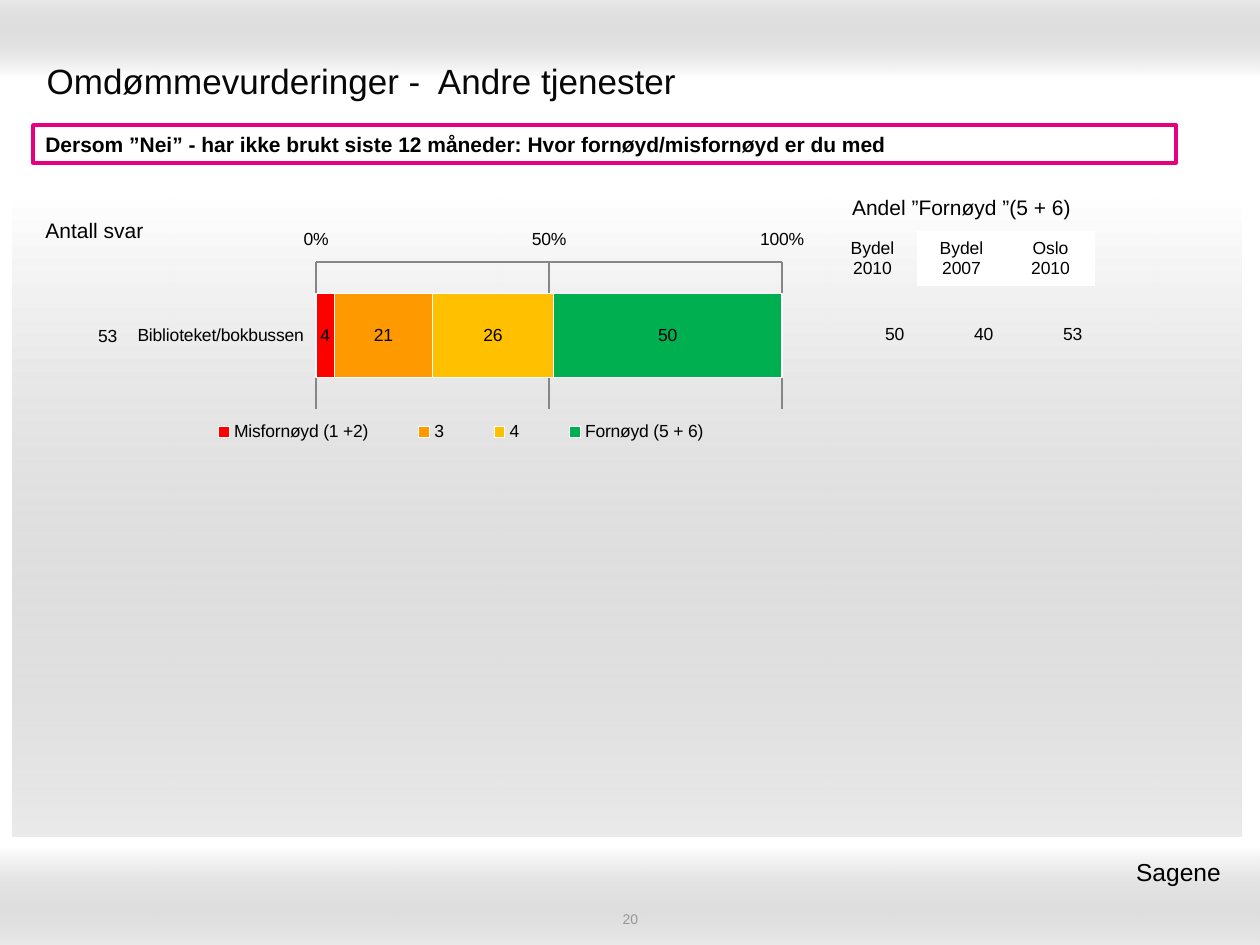
from lxml import etree
from pptx import Presentation
from pptx.chart.data import CategoryChartData
from pptx.dml.color import RGBColor
from pptx.enum.chart import (XL_CHART_TYPE, XL_LABEL_POSITION, XL_LEGEND_POSITION,
                             XL_TICK_LABEL_POSITION, XL_TICK_MARK)
from pptx.enum.shapes import MSO_SHAPE
from pptx.enum.text import MSO_ANCHOR, PP_ALIGN
from pptx.oxml import parse_xml
from pptx.oxml.ns import qn
from pptx.util import Pt

LEFT, CENTER, RIGHT = PP_ALIGN.LEFT, PP_ALIGN.CENTER, PP_ALIGN.RIGHT
MIDDLE, TOP = MSO_ANCHOR.MIDDLE, MSO_ANCHOR.TOP
LOW = XL_TICK_LABEL_POSITION.LOW
NO_TICK, INSIDE_TICK = XL_TICK_MARK.NONE, XL_TICK_MARK.INSIDE
FONT = "Arial"
NO_STYLE = "{2D5ABB26-0587-4C30-8999-92F81FD0307C}"
COLORS = {"black": "000000", "title": "080808", "white": "FFFFFF", "band": "999999",
          "number": "969696", "frame": "E7007E", "axis": "868686", "red": "FF0000",
          "orange": "FF9900", "yellow": "FFC000", "green": "00B050"}

TITLE = "Omdømmevurderinger -  Andre tjenester"
QUESTION = "Dersom ”Nei” - har ikke brukt siste 12 måneder: Hvor fornøyd/misfornøyd er du med"
DISTRICT = "Sagene "
PAGE = "20"
BANDS = [((0, 0, 1260, 78), 270), ((0, 847, 1260, 98), 90), ((13, 196, 1228, 641), 90)]
SERVICE = "Biblioteket/bokbussen"
RATINGS = [("Misfornøyd (1 +2)", 4, "red"), ("3", 21, "orange"),
           ("4", 26, "yellow"), ("Fornøyd (5 + 6)", 50, "green")]
CHART_BOX = (123, 226, 694, 227)
PLOT_BOX = (316, 262, 466, 147)
LEGEND_BOX = (174, 420, 574, 24)
SHARE_TITLE = "Andel ”Fornøyd ”(5 + 6)"
SHARE_HEADS = ["Bydel\n2010", "Bydel\n2007", "Oslo\n2010"]
SHARES = ["50", "40", "53"]
ANSWERS_HEAD, ANSWERS = "Antall svar", "53"


def px(value):
    return round(value * 914400 / 126)


def box(bounds):
    return [px(value) for value in bounds]


def rgb(name):
    return RGBColor.from_string(COLORS[name])


def set_font(font, size, color="black", bold=False):
    font.name, font.size, font.bold = FONT, Pt(size), bold
    font.color.rgb = rgb(color)


def write(frame, text, size, align=LEFT, color="black", bold=False, anchor=MIDDLE):
    frame.word_wrap = True
    frame.vertical_anchor = anchor
    frame.text = text
    for paragraph in frame.paragraphs:
        paragraph.alignment = align
        set_font(paragraph.font, size, color, bold)


def add_text(bounds, *args, **kwargs):
    write(slide.shapes.add_textbox(*box(bounds)).text_frame, *args, **kwargs)


def add_rectangle(bounds):
    rectangle = slide.shapes.add_shape(MSO_SHAPE.RECTANGLE, *box(bounds))
    rectangle.shadow.inherit = False
    return rectangle


def add_band(bounds, angle, order):
    band = add_rectangle(bounds)
    band.line.fill.background()
    gradient = parse_xml(
        '<a:gradFill xmlns:a="http://schemas.openxmlformats.org/drawingml/2006/main" rotWithShape="1">'
        f'<a:gsLst><a:gs pos="0"><a:srgbClr val="{COLORS["white"]}"/></a:gs>'
        f'<a:gs pos="100000"><a:srgbClr val="{COLORS["band"]}"><a:alpha val="20000"/></a:srgbClr></a:gs>'
        f'</a:gsLst><a:lin ang="{angle * 60000}" scaled="1"/></a:gradFill>')
    band._element.spPr.find(qn("a:prstGeom")).addnext(gradient)
    slide.shapes._spTree.insert(2 + order, band._element)


def add_table(left, top, column_width, heights, columns):
    bounds = (left, top, column_width * columns, sum(heights))
    table = slide.shapes.add_table(len(heights), columns, *box(bounds)).table
    table.first_row = table.horz_banding = False
    table._tbl.tblPr.find(qn("a:tableStyleId")).text = NO_STYLE
    for column in table.columns:
        column.width = px(column_width)
    for row, height in zip(table.rows, heights):
        row.height = px(height)
    for cell in table.iter_cells():
        cell.fill.background()
        cell.margin_top = cell.margin_bottom = 0
    return table


def fill_cell(cell, text, size, align):
    write(cell.text_frame, text, size, align)
    cell.vertical_anchor = MIDDLE


def place(parent, bounds, inner=False):
    for old in parent.findall(qn("c:layout")):
        parent.remove(old)
    layout = etree.Element(qn("c:layout"))
    manual = etree.SubElement(layout, qn("c:manualLayout"))
    settings = [("layoutTarget", "inner")] if inner else []
    settings += [("xMode", "edge"), ("yMode", "edge")]
    left, top, width, height = CHART_BOX
    x, y, w, h = bounds
    fractions = ((x - left) / width, (y - top) / height, w / width, h / height)
    settings += [(key, f"{value:.4f}") for key, value in zip("xywh", fractions)]
    for key, value in settings:
        etree.SubElement(manual, qn(f"c:{key}")).set("val", value)
    if inner:
        parent.insert(0, layout)
    else:
        parent.find(qn("c:legendPos")).addnext(layout)


def add_ratings_chart():
    data = CategoryChartData(number_format="0")
    data.categories = [SERVICE]
    for name, value, _ in RATINGS:
        data.add_series(name, [value])
    chart = slide.shapes.add_chart(XL_CHART_TYPE.BAR_STACKED, *box(CHART_BOX), data).chart
    set_font(chart.font, 10)
    chart.has_title = False
    chart.has_legend = True
    chart.legend.position = XL_LEGEND_POSITION.BOTTOM
    chart.legend.include_in_layout = False
    plot = chart.plots[0]
    plot.gap_width, plot.overlap = 75, 100
    plot.vary_by_categories = False
    for series, (_, _, color) in zip(plot.series, RATINGS):
        series.format.fill.solid()
        series.format.fill.fore_color.rgb = rgb(color)
        series.format.line.color.rgb = rgb("white")
        series.format.line.width = Pt(1)
        labels = series.data_labels
        labels.show_value = True
        labels.number_format, labels.number_format_is_linked = "0", False
        labels.position = XL_LABEL_POSITION.CENTER
        set_font(labels.font, 10)
    services, percent = chart.category_axis, chart.value_axis
    services.reverse_order = True
    services.major_tick_mark = NO_TICK
    percent.major_tick_mark = INSIDE_TICK
    percent.minimum_scale, percent.maximum_scale, percent.major_unit = 0, 100, 50
    percent.tick_labels.number_format = "General\\%"
    percent.tick_labels.number_format_is_linked = False
    percent.has_major_gridlines = True
    for axis in (services, percent):
        axis.tick_label_position = LOW
        axis.minor_tick_mark = NO_TICK
    for part in (services, percent, percent.major_gridlines):
        part.format.line.color.rgb = rgb("axis")
        part.format.line.width = Pt(0.75)
    place(chart._chartSpace.chart.plotArea, PLOT_BOX, inner=True)
    place(chart.legend._element, LEGEND_BOX)


presentation = Presentation()
presentation.slide_width, presentation.slide_height = px(1260), px(945)
slide = presentation.slides.add_slide(presentation.slide_layouts[5])

title = slide.shapes.title
title.left, title.top, title.width, title.height = box((34, 46, 1191, 69))
write(title.text_frame, TITLE, 20, color="title")
for order, (bounds, angle) in enumerate(BANDS):
    add_band(bounds, angle, order)
add_text((431, 910, 399, 17), PAGE, 8, CENTER, "number")

question = add_rectangle((33, 125, 1143, 38))
question.fill.solid()
question.fill.fore_color.rgb = rgb("white")
question.line.color.rgb = rgb("frame")
question.line.width = Pt(2)
write(question.text_frame, QUESTION, 12, bold=True)

add_ratings_chart()

share_values = add_table(828, 289, 89, [90], 3)
for column, share in enumerate(SHARES):
    fill_cell(share_values.cell(0, column), share, 10, RIGHT)

share_heads = add_table(828, 185, 89, [46, 55], 3)
share_heads.cell(0, 0).merge(share_heads.cell(0, 2))
fill_cell(share_heads.cell(0, 0), SHARE_TITLE, 12, CENTER)
for column, head in enumerate(SHARE_HEADS):
    cell = share_heads.cell(1, column)
    fill_cell(cell, head, 10, CENTER)
    if column:
        cell.fill.solid()
        cell.fill.fore_color.rgb = rgb("white")

fill_cell(add_table(64, 292, 66, [90], 1).cell(0, 0), ANSWERS, 10, RIGHT)
fill_cell(add_table(5, 194, 179, [75], 1).cell(0, 0), ANSWERS_HEAD, 12, CENTER)
add_text((769, 851, 471, 72), DISTRICT, 14, RIGHT, anchor=TOP)

presentation.save("out.pptx")
